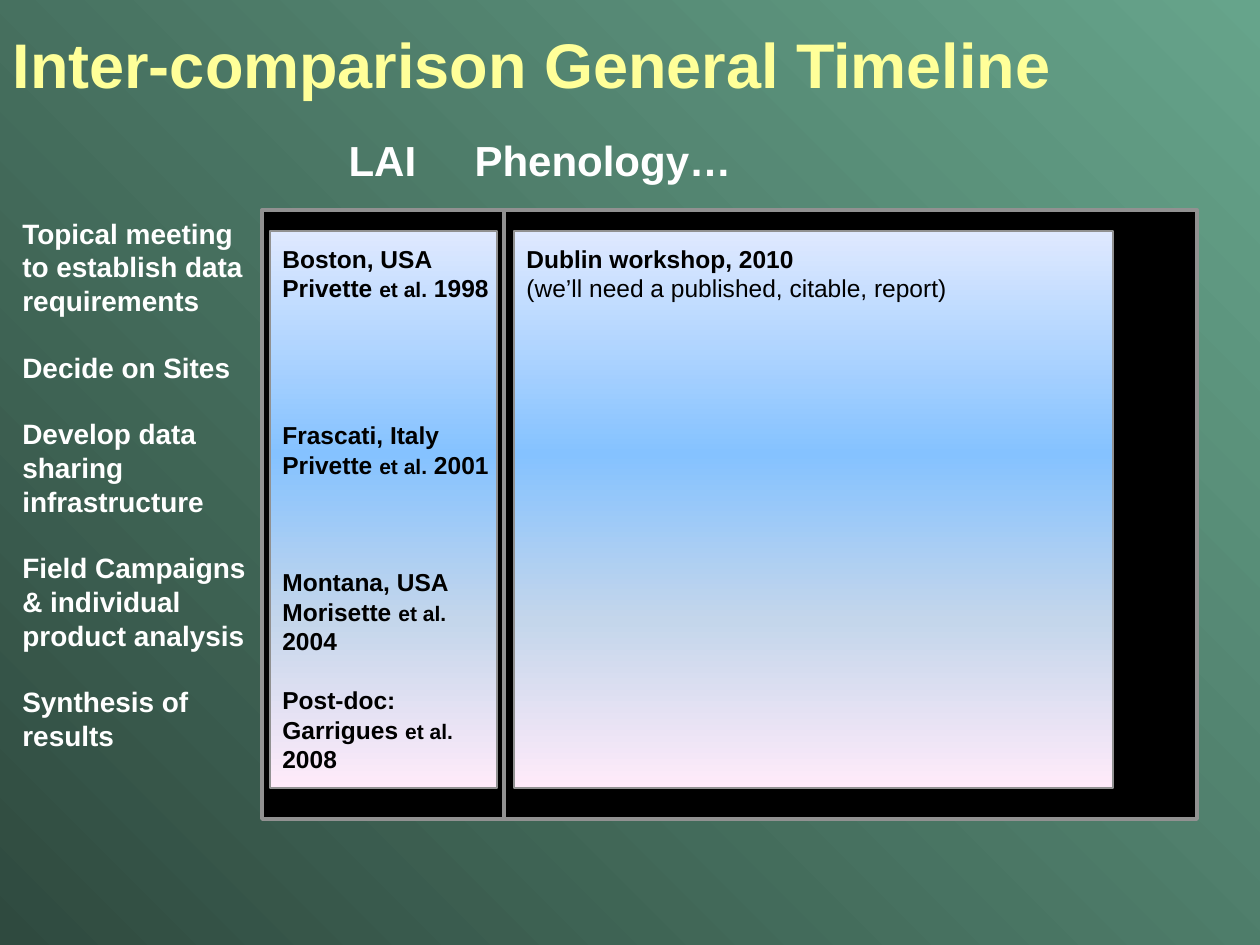
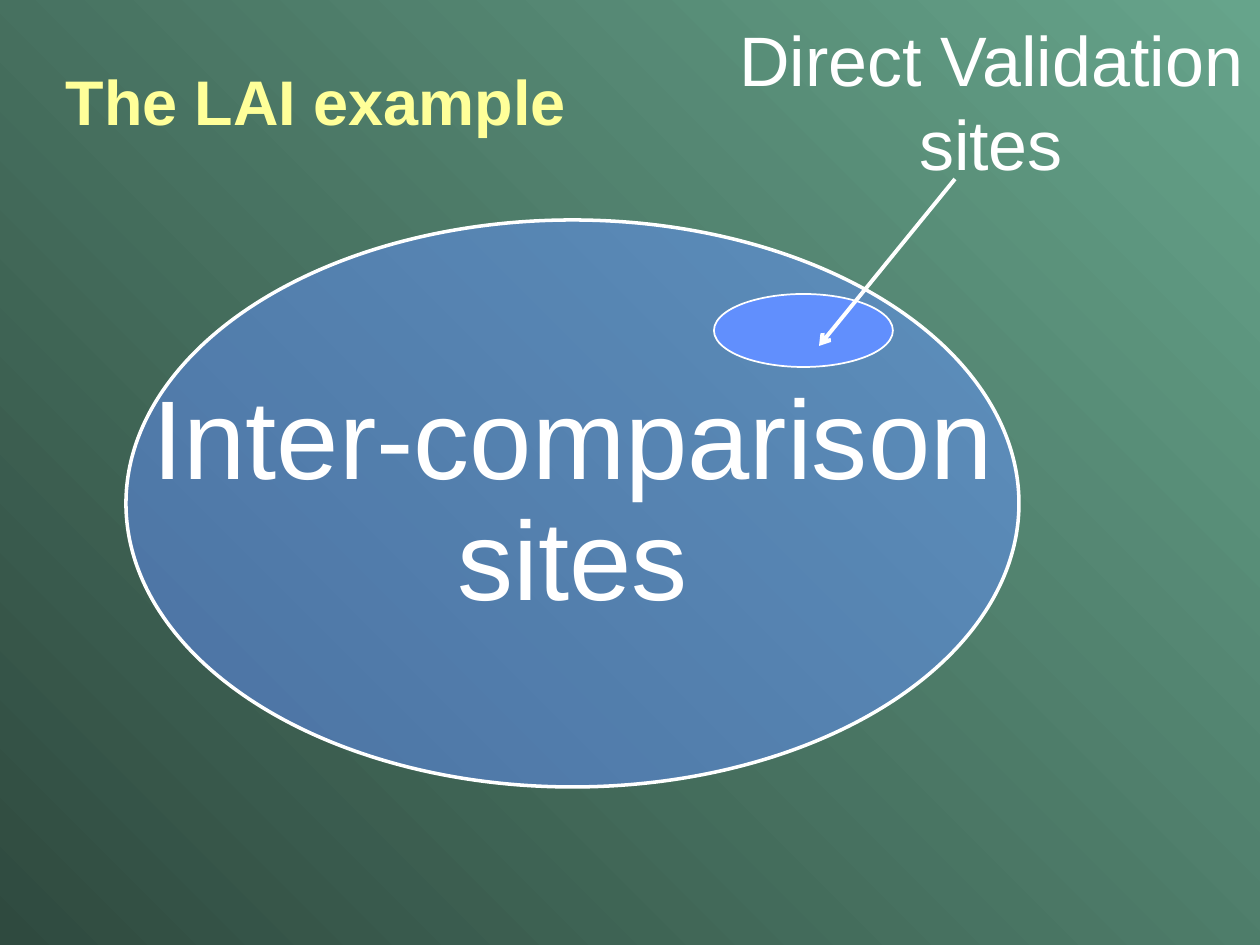
from lxml import etree
from pptx import Presentation
from pptx.dml.color import RGBColor
from pptx.enum.shapes import MSO_CONNECTOR, MSO_SHAPE
from pptx.enum.text import MSO_ANCHOR, MSO_AUTO_SIZE, PP_ALIGN
from pptx.oxml.ns import qn
from pptx.util import Emu, Pt

RECT, OVAL = MSO_SHAPE.RECTANGLE, MSO_SHAPE.OVAL
STRAIGHT = MSO_CONNECTOR.STRAIGHT
TOP, MIDDLE = MSO_ANCHOR.TOP, MSO_ANCHOR.MIDDLE
LEFT, CENTER = PP_ALIGN.LEFT, PP_ALIGN.CENTER
NO_FIT = MSO_AUTO_SIZE.NONE

FONT = "Arial"
WHITE = RGBColor(0xFF, 0xFF, 0xFF)
BLACK = RGBColor(0, 0, 0)
YELLOW = RGBColor(0xFF, 0xFF, 0x99)
GREY = RGBColor(0x91, 0x91, 0x91)
BLUE = RGBColor(0x61, 0x8F, 0xFD)
DARK_GREEN = RGBColor(0x2F, 0x4A, 0x3F)
LIGHT_GREEN = RGBColor(0x66, 0xA4, 0x8B)
PANEL_STOPS = [
    (0, RGBColor(0xDF, 0xE9, 0xFF)),
    (40, RGBColor(0x85, 0xC2, 0xFF)),
    (70, RGBColor(0xC4, 0xD6, 0xEB)),
    (100, RGBColor(0xFF, 0xEB, 0xFA)),
]

STEPS = [
    "Topical meeting to establish data requirements",
    "Decide on Sites",
    "Develop data sharing infrastructure",
    "Field Campaigns & individual product analysis",
    "Synthesis of results",
]
LINE = 16.8
LAI_EVENTS = [
    (0, ["Boston, USA", "Privette et al. 1998"]),
    (4, ["Frascati, Italy", "Privette et al. 2001"]),
    (3, ["Montana, USA", "Morisette et al. ", "2004"]),
    (1, ["Post-doc:", "Garrigues et al. ", "2008"]),
]
PHENOLOGY_EVENTS = [
    (0, ["Dublin workshop, 2010", "(we’ll need a published, citable, report)"]),
]


def px(n):
    return Emu(round(n * 914400 / 126))


def place(s, box):
    s.left, s.top, s.width, s.height = map(px, box)


def style(font, size, color, bold=False):
    font.name, font.size, font.bold = FONT, Pt(size), bold
    font.color.rgb = color


def add_title(slide, text, box):
    s = slide.shapes.title
    place(s, box)
    tf = s.text_frame
    tf.text = text
    tf.auto_size, tf.vertical_anchor = NO_FIT, MIDDLE
    p = tf.paragraphs[0]
    p.alignment = LEFT
    style(p.runs[0].font, 36, YELLOW, True)


def add_shape(shapes, kind, box, fill, line, width):
    s = shapes.add_shape(kind, *map(px, box))
    s.shadow.inherit = False
    if fill is not None:
        s.fill.solid()
        s.fill.fore_color.rgb = fill
    s.line.color.rgb = line
    s.line.width = Pt(width)
    return s


def add_text(shapes, lines, box, size, bold=False, align=LEFT, gap=0):
    s = shapes.add_textbox(*map(px, box))
    tf = s.text_frame
    tf.word_wrap = True
    for i, line in enumerate(lines):
        p = tf.add_paragraph() if i else tf.paragraphs[0]
        p.text = line
        p.alignment = align
        if i and gap:
            p.space_before = Pt(gap)
        for r in p.runs:
            style(r.font, size, WHITE, bold)
    return tf


def fill_panel(s):
    s.fill.gradient()
    s.fill.gradient_angle = 270
    stops = s._element.spPr.find(qn("a:gradFill")).find(qn("a:gsLst"))
    for gs in list(stops):
        stops.remove(gs)
    for pos, color in PANEL_STOPS:
        gs = etree.SubElement(stops, qn("a:gs"), pos=str(pos * 1000))
        etree.SubElement(gs, qn("a:srgbClr"), val=str(color))


def add_events(tf, events, bold_rest):
    for i, (gap, lines) in enumerate(events):
        p = tf.add_paragraph() if i else tf.paragraphs[0]
        p.alignment = LEFT
        if gap:
            p.space_before = Pt(gap * LINE)
        for j, line in enumerate(lines):
            if j:
                p.add_line_break()
            for part in filter(None, line.partition("et al.")):
                r = p.add_run()
                r.text = part
                size = 12 if part == "et al." else 14
                style(r.font, size, BLACK, bold_rest or j == 0)


def add_panel(slide, box, offset, width, events, bold_rest):
    x, y, w, h = box
    panel = (x + offset, y + 21, width, h - 52)
    s = add_shape(slide.shapes, RECT, panel, None, GREY, 0.75)
    fill_panel(s)
    tf = s.text_frame
    tf.word_wrap, tf.vertical_anchor = True, TOP
    tf.margin_top, tf.margin_right = px(13), 0
    add_events(tf, events, bold_rest)


def add_headings(slide, box):
    s = slide.placeholders[1]
    place(s, box)
    tf = s.text_frame
    tf.text = "LAI\tPhenology…"
    tf.auto_size = NO_FIT
    tf.margin_top = px(8)
    p = tf.paragraphs[0]
    p.space_before = Pt(0)
    pPr = p._p.get_or_add_pPr()
    pPr.set("marL", "0")
    pPr.set("indent", "0")
    etree.SubElement(pPr, qn("a:buNone"))
    tabs = etree.SubElement(pPr, qn("a:tabLst"))
    etree.SubElement(tabs, qn("a:tab"), pos=str(px(231)), algn="l")
    for r in p.runs:
        style(r.font, 24, WHITE, True)


def timeline_slide(prs):
    slide = prs.slides.add_slide(prs.slide_layouts[1])
    add_title(slide, "Inter-comparison General Timeline", (0, 0, 1239, 126))
    add_headings(slide, (336, 126, 914, 368))
    add_text(slide.shapes, STEPS, (10, 210, 252, 552), 16, True, gap=19)
    lai, phenology = (262, 210, 273, 609), (504, 210, 693, 609)
    for box in (lai, phenology):
        add_shape(slide.shapes, RECT, box, BLACK, GREY, 2.25)
    add_panel(slide, lai, 8, 227, LAI_EVENTS, True)
    add_panel(slide, phenology, 10, 599, PHENOLOGY_EVENTS, False)


def add_sites(slide, box):
    group = slide.shapes.add_group_shape()
    s = add_shape(group.shapes, OVAL, box, BLUE, WHITE, 2)
    color = s._element.spPr.find(qn("a:solidFill"))[0]
    etree.SubElement(color, qn("a:alpha"), val="50000")
    tf = add_text(group.shapes, ["Inter-comparison sites"], box, 64, align=CENTER)
    tf.vertical_anchor = MIDDLE
    tf.margin_left = tf.margin_top = tf.margin_right = tf.margin_bottom = 0
    tf.paragraphs[0].line_spacing = 0.9
    x, y, w, h = box
    add_shape(slide.shapes, OVAL, (x + 588, y + 74, 179, 73), BLUE, WHITE, 1)


def add_arrow(slide, start, end):
    c = slide.shapes.add_connector(STRAIGHT, *map(px, start + end))
    c.line.color.rgb = WHITE
    c.line.width = Pt(2.25)
    etree.SubElement(c.line._get_or_add_ln(), qn("a:tailEnd"), type="arrow")
    etree.SubElement(c._element.spPr, qn("a:effectLst"))


def example_slide(prs):
    slide = prs.slides.add_slide(prs.slide_layouts[5])
    add_title(slide, "The LAI example", (53, 21, 1144, 158))
    add_sites(slide, (126, 220, 893, 567))
    tf = add_text(slide.shapes, ["Direct Validation\vsites"], (724, 10, 534, 183), 40, align=CENTER)
    tf.word_wrap = False
    add_arrow(slide, (955, 179), (819, 346))


def set_background(prs):
    fill = prs.slide_master.background.fill
    fill.gradient()
    fill.gradient_angle = 45
    for stop, color in zip(fill.gradient_stops, (DARK_GREEN, LIGHT_GREEN)):
        stop.color.rgb = color


def main():
    prs = Presentation()
    prs.slide_width, prs.slide_height = px(1260), px(945)
    set_background(prs)
    timeline_slide(prs)
    example_slide(prs)
    prs.save("out.pptx")


if __name__ == "__main__":
    main()
